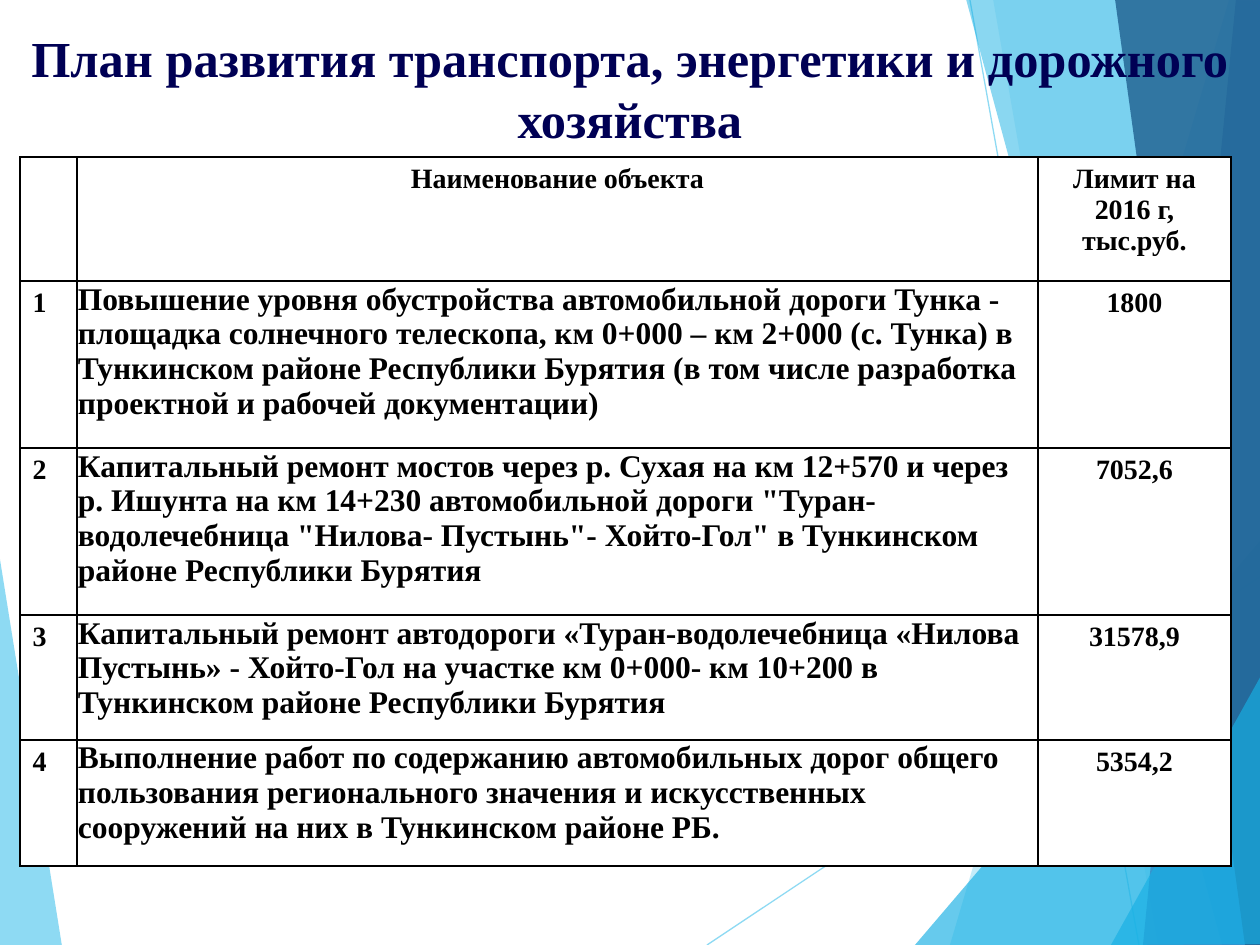
from pptx import Presentation
from pptx.dml.color import RGBColor as RGB
from pptx.enum.shapes import MSO_CONNECTOR as LINK
from pptx.enum.text import MSO_ANCHOR as ANCHOR, PP_ALIGN as ALIGN
from pptx.oxml.ns import qn
from pptx.util import Pt
from lxml.etree import SubElement as Sub

PX = 914400 / 126
FONT = "Times New Roman"
COLORS = {
    "sky": "5FCBEF", "cyan": "17B0E4", "blue": "2E83C3", "deep": "226292",
    "navy": "000054", "black": "000000", "white": "FFFFFF",
}
LEFT = ("sky", 70, [(-1, 553), (62, 946), (-1, 945)])
RAYS = [((707, 945), (1261, 576)), ((970, 0), (1139, 945))]
BANDS = [
    ("sky", 36, [(1229, 0), (950, 945), (1262, 946), (1261, 1)]),
    ("sky", 20, [(993, -1), (1158, 945), (1261, 945), (1261, -1)]),
    ("cyan", 66, [(915, 945), (1260, 541), (1261, 945)]),
    ("cyan", 50, [(966, -1), (1222, 945), (1261, 944), (1261, -1)]),
    ("blue", 70, [(1236, -1), (1143, 945), (1261, 945), (1260, -1)]),
    ("deep", 82, [(1115, -1), (1245, 945), (1262, 945), (1260, -1)]),
    ("cyan", 66, [(1111, 945), (1262, 674), (1262, 944)]),
]
TITLE = "План развития транспорта, энергетики и дорожного хозяйства"
COLS = [57, 961, 193]
ROWS = [124, 167, 167, 125, 126]
HEAD = ["", "Наименование объекта", "Лимит на 2016 г, тыс.руб."]
WORKS = [
    ("Повышение уровня обустройства автомобильной дороги Тунка - площадка "
     "солнечного телескопа, км 0+000 – км 2+000 (с. Тунка) в Тункинском районе "
     "Республики Бурятия (в том числе разработка проектной и рабочей "
     "документации)", "1800"),
    ("Капитальный ремонт мостов через р. Сухая на км 12+570 и через р. Ишунта "
     "на км 14+230 автомобильной дороги \"Туран-водолечебница \"Нилова- "
     "Пустынь\"- Хойто-Гол\" в Тункинском районе Республики Бурятия", "7052,6"),
    ("Капитальный ремонт автодороги «Туран-водолечебница «Нилова Пустынь» - "
     "Хойто-Гол на участке км 0+000- км 10+200 в Тункинском районе Республики "
     "Бурятия", "31578,9"),
    ("Выполнение работ по содержанию автомобильных дорог общего пользования "
     "регионального значения и искусственных сооружений на них в Тункинском "
     "районе РБ.", "5354,2"),
]


def px(n):
    return round(n * PX)


def paint(fill, name):
    fill.solid()
    fill.fore_color.rgb = RGB.from_string(COLORS[name])


def fade(shape, pct):
    tone = shape._element.spPr.find(".//" + qn("a:srgbClr"))
    Sub(tone, qn("a:alpha")).set("val", str(pct * 1000))


def add_band(slide, name, pct, points):
    pen = slide.shapes.build_freeform(*points[0], scale=PX)
    pen.add_line_segments(points[1:], close=True)
    band = pen.convert_to_shape()
    band.shadow.inherit = False
    paint(band.fill, name)
    band.line.fill.background()
    fade(band, pct)


def add_ray(slide, start, end):
    ray = slide.shapes.add_connector(LINK.STRAIGHT, *map(px, start + end))
    ray.line.width = Pt(0.75)
    paint(ray.line.fill, "sky")
    fade(ray, 70)
    Sub(ray._element.spPr, qn("a:effectLst"))


def write(frame, text, size, name, align):
    para = frame.paragraphs[0]
    para.text = text
    para.alignment = align
    font = para.font
    font.name, font.size, font.bold = FONT, Pt(size), True
    font.color.rgb = RGB.from_string(COLORS[name])


def add_title(slide):
    box = slide.shapes.add_textbox(0, px(29), px(1260), px(118))
    frame = box.text_frame
    frame.word_wrap = True
    frame.vertical_anchor = ANCHOR.MIDDLE
    write(frame, TITLE, 28.8, "navy", ALIGN.CENTER)


def edge(cell):
    props = cell._tc.get_or_add_tcPr()
    for side in ("lnL", "lnR", "lnT", "lnB"):
        line = Sub(props, qn("a:" + side), w=str(Pt(1)))
        fill = Sub(line, qn("a:solidFill"))
        Sub(fill, qn("a:srgbClr"), val=COLORS["black"])


def add_grid(slide):
    frame = slide.shapes.add_table(len(ROWS), len(COLS), px(20), px(157),
                                   px(sum(COLS)), px(sum(ROWS)))
    table = frame.table
    table.first_row = table.horz_banding = False
    for col, width in zip(table.columns, COLS):
        col.width = px(width)
    for row, height in zip(table.rows, ROWS):
        row.height = px(height)
    data = [HEAD] + [[str(n), *work] for n, work in enumerate(WORKS, 1)]
    for r, line in enumerate(data):
        for c, text in enumerate(line):
            cell = table.cell(r, c)
            edge(cell)
            paint(cell.fill, "white")
            body = r > 0 and c == 1
            if body:
                cell.margin_left = cell.margin_right = cell.margin_top = px(1)
                cell.margin_bottom = 0
            left = body or c == 0
            write(cell.text_frame, text, 18 if body else 16, "black",
                  ALIGN.LEFT if left else ALIGN.CENTER)


def main():
    deck = Presentation()
    deck.slide_width, deck.slide_height = px(1260), px(945)
    slide = deck.slides.add_slide(deck.slide_layouts[6])
    add_band(slide, *LEFT)
    for ray in RAYS:
        add_ray(slide, *ray)
    for band in BANDS:
        add_band(slide, *band)
    add_title(slide)
    add_grid(slide)
    deck.save("out.pptx")


if __name__ == "__main__":
    main()
